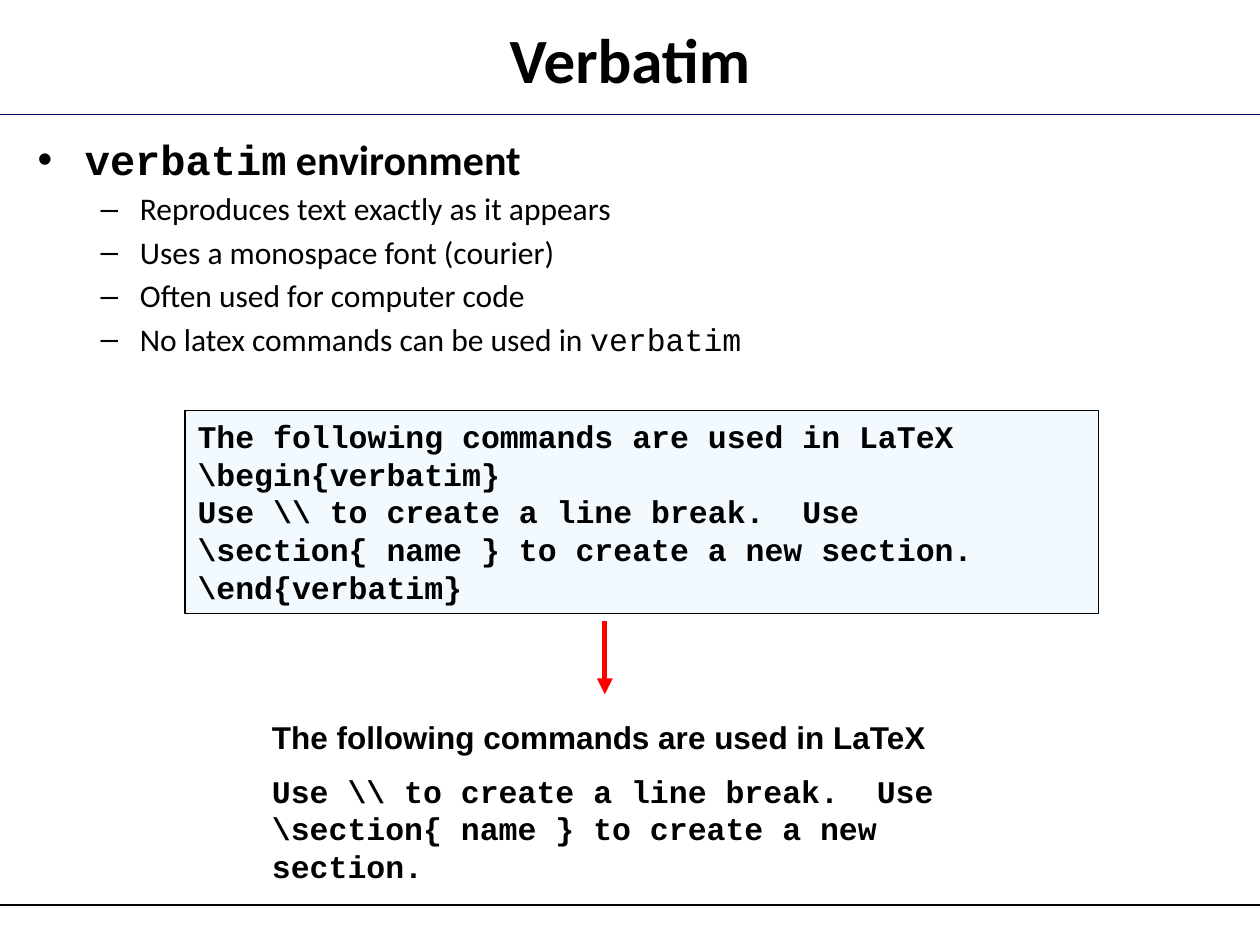
from lxml.etree import SubElement
from pptx import Presentation
from pptx.dml.color import RGBColor
from pptx.enum.shapes import MSO_CONNECTOR, MSO_SHAPE
from pptx.enum.text import MSO_ANCHOR, PP_ALIGN
from pptx.oxml.ns import qn
from pptx.util import Pt

BLACK = RGBColor(0x00, 0x00, 0x00)
NAVY = RGBColor(0x00, 0x00, 0x66)
RED = RGBColor(0xFF, 0x00, 0x00)
PALE_BLUE = RGBColor(0xF3, 0xFA, 0xFF)
SANS, MONO, OUTPUT = "Calibri", "Courier New", "Arial"

TITLE = "Verbatim"
HEADING = [("verbatim", MONO), (" environment", SANS)]
POINTS = [
    [("Reproduces text exactly as it appears", SANS)],
    [("Uses a monospace font (courier)", SANS)],
    [("Often used for computer code", SANS)],
    [("No latex commands can be used in ", SANS), ("verbatim", MONO)],
]
INTRO = "The following commands are used in LaTeX"
VERBATIM = [
    r"Use \\ to create a line break.  Use",
    r"\section{ name } to create a new section.",
]
CODE = [INTRO, r"\begin{verbatim}", *VERBATIM, r"\end{verbatim}"]

WIDTH, HEIGHT = 720, 540
RULES = [(65.5, NAVY), (517, BLACK)]


def add_paragraph(tf, runs, size, bold=True, before=0, bullet=None):
    first = not tf.paragraphs[0].runs
    p = tf.paragraphs[0] if first else tf.add_paragraph()
    p.alignment = PP_ALIGN.LEFT
    if not first:
        p.space_before = Pt(before)
    if bullet:
        char, indent, hanging = bullet
        pPr = p._p.get_or_add_pPr()
        pPr.set("marL", str(Pt(indent)))
        pPr.set("indent", str(Pt(-hanging)))
        SubElement(pPr, qn("a:buFont"), typeface="Arial")
        SubElement(pPr, qn("a:buChar"), char=char)
    for text, name in runs:
        r = p.add_run()
        r.text = text
        r.font.name, r.font.size, r.font.bold = name, Pt(size), bold
        r.font.color.rgb = BLACK
    return p


def add_text_box(s, left, top, width, height):
    tf = s.shapes.add_textbox(Pt(left), Pt(top), Pt(width), Pt(height)).text_frame
    tf.word_wrap = True
    return tf


def add_line(s, x1, y1, x2, y2, color, weight, arrow=False):
    line = s.shapes.add_connector(
        MSO_CONNECTOR.STRAIGHT, Pt(x1), Pt(y1), Pt(x2), Pt(y2))
    line.line.color.rgb = color
    line.line.width = Pt(weight)
    if arrow:
        SubElement(line.line._get_or_add_ln(), qn("a:tailEnd"), type="triangle")
    SubElement(line._element.spPr, qn("a:effectLst"))


def main():
    prs = Presentation()
    prs.slide_width, prs.slide_height = Pt(WIDTH), Pt(HEIGHT)
    s = prs.slides.add_slide(prs.slide_layouts[6])

    for y, color in RULES:
        add_line(s, 0, y, WIDTH, y, color, 1)

    tf = add_text_box(s, 7.2, 8.6, 705.6, 49.7)
    tf.vertical_anchor = MSO_ANCHOR.MIDDLE
    add_paragraph(tf, [(TITLE, SANS)], 36).alignment = PP_ALIGN.CENTER

    tf = add_text_box(s, 14.4, 72.7, 691.2, 430.6)
    add_paragraph(tf, HEADING, 24, bullet=("•", 27, 27))
    for runs in POINTS:
        add_paragraph(tf, runs, 18, bold=False, before=3.2, bullet=("–", 58.5, 22.5))

    box = s.shapes.add_shape(
        MSO_SHAPE.RECTANGLE, Pt(105.8), Pt(234.7), Pt(522), Pt(116))
    box.shadow.inherit = False
    box.fill.solid()
    box.fill.fore_color.rgb = PALE_BLUE
    box.line.color.rgb = BLACK
    box.line.width = Pt(0.75)
    tf = box.text_frame
    tf.word_wrap = True
    tf.vertical_anchor = MSO_ANCHOR.TOP
    for text in CODE:
        add_paragraph(tf, [(text, MONO)], 18)

    add_line(s, 345.6, 355, 345.6, 396.7, RED, 3, arrow=True)

    tf = add_text_box(s, 148.3, 406.8, 455, 82)
    add_paragraph(tf, [(INTRO, OUTPUT)], 18)
    for text, before in zip(VERBATIM, (9, 0)):
        add_paragraph(tf, [(text, MONO)], 18, before=before)

    prs.save("out.pptx")


if __name__ == "__main__":
    main()
